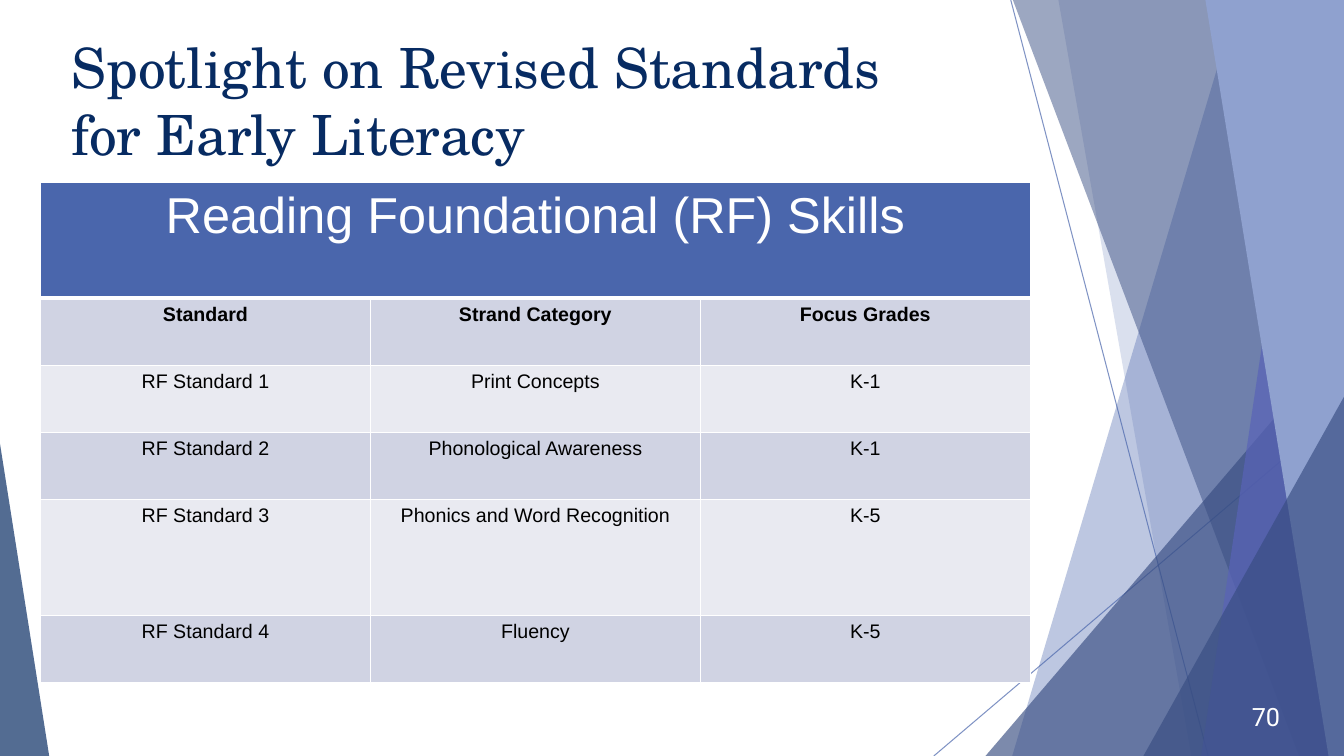
from lxml import etree
from pptx import Presentation
from pptx import util as u
from pptx.dml.color import RGBColor
from pptx.enum import shapes, text
from pptx.oxml import ns

WIDTH, HEIGHT = 960, 540
BLUE, DEEP, NAVY, WHITE = "4A66AC", "374C81", "072B62", "FFFFFF"
RAYS = [
    ("line", (722, 0, 863, HEIGHT), BLUE, 69),
    ("line", (WIDTH, 291, 667, HEIGHT), BLUE, 69),
    ("band", (884, 723, WIDTH), BLUE, 36),
    ("band", (756, 851, WIDTH), BLUE, 20),
    ("triangle", (703.5, 240.5, 256.5, 300, 1), DEEP, 65),
    ("band", (723.5, 928, WIDTH), DEEP, 49),
    ("band", (938, 858, WIDTH), "5963B8", 69),
    ("band", (861, 949, WIDTH), "8FA1CF", 100),
    ("triangle", (816.5, 283.5, 143.5, 257, 1), DEEP, 65),
    ("triangle", (0, 317, 35.3, 224, 0), NAVY, 69),
]
HEADING = "Reading Foundational (RF) Skills"
ROWS = [
    ("Standard", "Strand Category", "Focus Grades"),
    ("RF Standard 1", "Print Concepts", "K-1"),
    ("RF Standard 2", "Phonological Awareness", "K-1"),
    ("RF Standard 3", "Phonics and Word Recognition", "K-5"),
    ("RF Standard 4", "Fluency", "K-5"),
]
ROW_HEIGHTS = [82.5, 48, 48, 48, 82.5, 48]


def paint(color_format, color, opacity=100):
    """Set a colour from a hex string, with an opacity in percent."""
    color_format.rgb = RGBColor.from_string(color)
    if opacity < 100:
        node = color_format._xFill.find(ns.qn("a:srgbClr"))
        etree.SubElement(node, ns.qn("a:alpha"), val=str(opacity * 1000))


def style_text(text_frame, font_name, size, color, alignment, bold=False):
    """Format every run of a text frame."""
    for paragraph in text_frame.paragraphs:
        paragraph.alignment = alignment
        for run in paragraph.runs:
            run.font.name, run.font.size, run.font.bold = font_name, u.Pt(size), bold
            paint(run.font.color, color)


def add_ray(slide, kind, place, color, opacity):
    """Draw one line, full-height band or right triangle of the backdrop."""
    if kind == "line":
        line = slide.shapes.add_connector(
            shapes.MSO_CONNECTOR.STRAIGHT, *map(u.Pt, place))
        line.line.width = u.Pt(0.75)
        line.line.fill.solid()
        paint(line.line.fill.fore_color, color, opacity)
        etree.SubElement(line._element.spPr, ns.qn("a:effectLst"))
        return
    if kind == "band":
        top_left, bottom_left, right = map(u.Pt, place)
        bottom = u.Pt(HEIGHT)
        builder = slide.shapes.build_freeform(top_left, 0)
        builder.add_line_segments(
            [(right, 0), (right, bottom), (bottom_left, bottom)])
        shape = builder.convert_to_shape()
    else:
        shape = slide.shapes.add_shape(
            shapes.MSO_SHAPE.ISOSCELES_TRIANGLE, *map(u.Pt, place[:4]))
        shape.adjustments[0] = place[4]
    shape.shadow.inherit = False
    shape.line.fill.background()
    shape.fill.solid()
    paint(shape.fill.fore_color, color, opacity)


def add_title(slide, left, top, width, height):
    """Place the slide title in front of the backdrop."""
    title = slide.shapes.title
    title.element.getparent().append(title.element)
    title.left, title.top, title.width, title.height = map(
        u.Pt, (left, top, width, height))
    frame = title.text_frame
    frame.text = "Spotlight on Revised Standards\vfor Early Literacy"
    frame.auto_size = text.MSO_AUTO_SIZE.NONE
    frame.vertical_anchor = text.MSO_ANCHOR.TOP
    style_text(frame, "TeX Gyre Schola", 39.6, NAVY, text.PP_ALIGN.LEFT)


def add_page_number(slide, left, top, width, height):
    """Write the page number in the lower right corner."""
    box = slide.shapes.add_textbox(*map(u.Pt, (left, top, width, height)))
    frame = box.text_frame
    frame.text = "70"
    frame.word_wrap = True
    frame.vertical_anchor = text.MSO_ANCHOR.MIDDLE
    style_text(frame, "Roboto", 18, WHITE, text.PP_ALIGN.RIGHT)


def style_cell(cell, fill, size, color, bold=False, bottom_width=1):
    """Give a cell its white borders, fill and centred text."""
    properties = cell._tc.get_or_add_tcPr()
    for side, width in (("L", 1), ("R", 1), ("T", 1), ("B", bottom_width)):
        border = etree.SubElement(
            properties, ns.qn(f"a:ln{side}"), w=str(u.Pt(width)))
        solid = etree.SubElement(border, ns.qn("a:solidFill"))
        etree.SubElement(solid, ns.qn("a:srgbClr"), val=WHITE)
    cell.fill.solid()
    paint(cell.fill.fore_color, fill)
    style_text(cell.text_frame, "Arial", size, color, text.PP_ALIGN.CENTER, bold)


def add_standards_table(slide, left, top, width):
    """Build the standards table under its merged heading."""
    frame = slide.shapes.add_table(
        len(ROW_HEIGHTS), 3, *map(u.Pt, (left, top, width, sum(ROW_HEIGHTS))))
    table = frame.table
    for row, height in zip(table.rows, ROW_HEIGHTS):
        row.height = u.Pt(height)
    table.cell(0, 0).merge(table.cell(0, 2))
    table.cell(0, 0).text = HEADING
    for column in range(3):
        style_cell(table.cell(0, column), BLUE, 36, WHITE, bottom_width=3)
    for row, values in enumerate(ROWS, 1):
        for column, value in enumerate(values):
            cell = table.cell(row, column)
            cell.text = value
            fill = "D0D3E3" if row % 2 else "E9EAF1"
            style_cell(cell, fill, 14, "000000", bold=row == 1)


def main():
    """Build and save the slide."""
    presentation = Presentation()
    presentation.slide_width, presentation.slide_height = u.Pt(WIDTH), u.Pt(HEIGHT)
    slide = presentation.slides.add_slide(presentation.slide_layouts[5])
    for ray in RAYS:
        add_ray(slide, *ray)
    add_title(slide, 44, 20, 708, 104)
    add_page_number(slide, 867.5, 497, 54, 29)
    add_standards_table(slide, 29, 130.5, 707)
    presentation.save("out.pptx")


if __name__ == "__main__":
    main()
